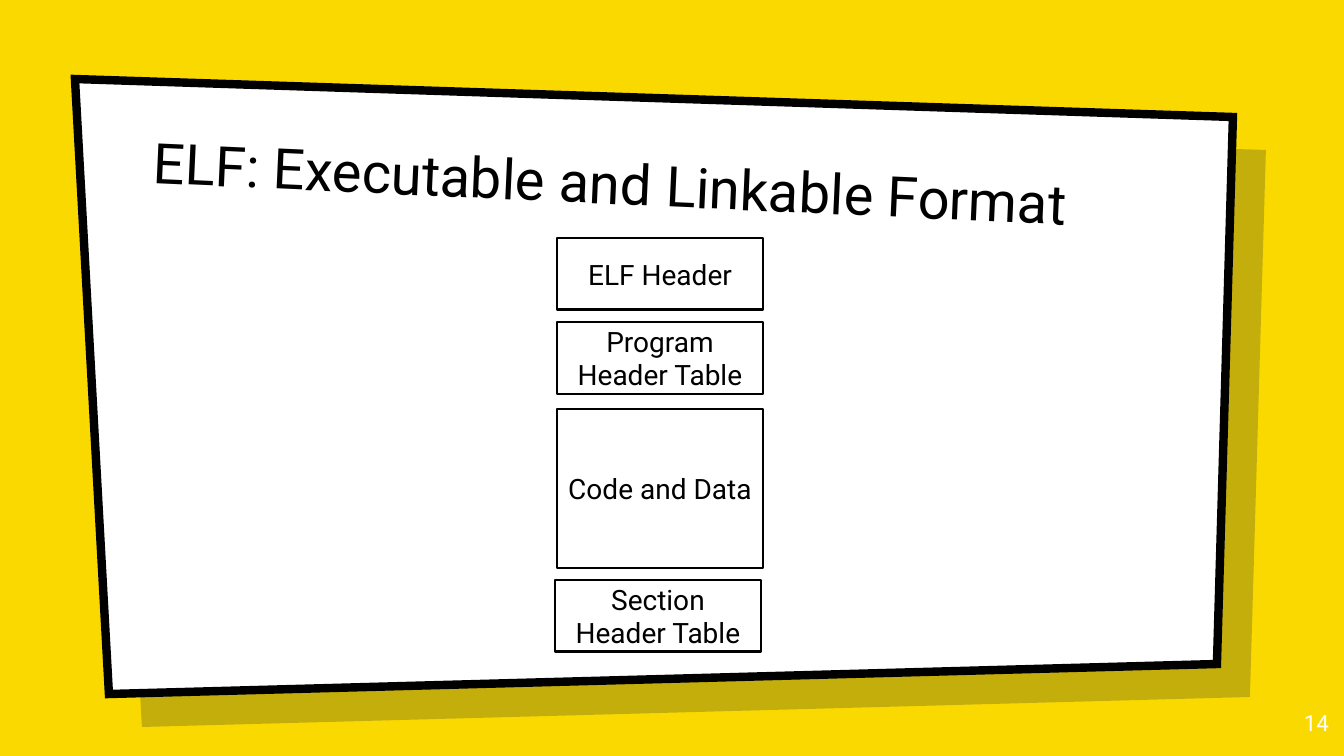
from lxml.etree import SubElement
from pptx import Presentation
from pptx.dml.color import RGBColor
from pptx.enum.shapes import MSO_SHAPE
from pptx.enum.text import MSO_ANCHOR, PP_ALIGN
from pptx.oxml.ns import qn
from pptx.util import Pt

PX = 914400 / 100.8  # EMU per pixel
YELLOW = RGBColor(0xFA, 0xD9, 0x00)
NAVY = RGBColor(0x00, 0x19, 0x36)
BLACK = RGBColor(0x00, 0x00, 0x00)
WHITE = RGBColor(0xFF, 0xFF, 0xFF)


def px(*lengths):
    return [round(length * PX) for length in lengths]


def write(shape, text, size, color, align, anchor, margins):
    frame = shape.text_frame
    frame.word_wrap = True
    frame.vertical_anchor = anchor
    for side, margin in zip(("left", "top", "right", "bottom"), px(*margins)):
        setattr(frame, f"margin_{side}", margin)
    paragraph = frame.paragraphs[0]
    paragraph.alignment = align
    run = paragraph.add_run()
    run.text = text
    for key, value in {"name": "Roboto", "size": Pt(size)}.items():
        setattr(run.font, key, value)
    run.font.color.rgb = color


prs = Presentation()
prs.slide_width, prs.slide_height = px(1344, 756)
slide = prs.slides.add_slide(prs.slide_layouts[6])
slide.background.fill.solid()
slide.background.fill.fore_color.rgb = YELLOW

# Slanted panel over its offset shade
corners = [(75, 79), (1233, 117), (1217, 664), (109, 694)]
for offset, color in ((33, NAVY), (0, WHITE)):
    points = [(x + offset, y + offset) for x, y in corners]
    builder = slide.shapes.build_freeform(*points[0], scale=PX)
    builder.add_line_segments(points[1:], close=True)
    panel = builder.convert_to_shape()
    panel.shadow.inherit = False
    panel.fill.solid()
    panel.fill.fore_color.rgb = color
    if offset:
        panel.line.fill.background()
        shade_color = panel.fill._xPr.find(".//" + qn("a:srgbClr"))
        SubElement(shade_color, qn("a:alpha"), val="22000")
    else:
        panel.line.color.rgb = BLACK
        panel.line.width = Pt(6)
        SubElement(panel.line._get_or_add_ln(), qn("a:miter"), lim="800000")

# Title, tilted along the panel's top edge
title = slide.shapes.add_textbox(*px(143, 129, 1033, 112))
title.rotation = 2.7
write(title, "ELF: Executable and Linkable Format", 40, BLACK,
      PP_ALIGN.LEFT, MSO_ANCHOR.MIDDLE, (10, 10, 10, 10))

# Slide number
number = slide.shapes.add_textbox(*px(1258, 699, 81, 57))
write(number, "14", 16, WHITE, PP_ALIGN.RIGHT, MSO_ANCHOR.TOP, (10, 10, 10, 10))

# ELF file layout, from first part to last
file_layout = slide.shapes.add_group_shape()
for text, left, top, height in (
    ("ELF Header", 557, 238, 72),
    ("Program Header Table", 557, 322, 72),
    ("Code and Data", 557, 409, 159),
    ("Section Header Table", 555, 580, 72),
):
    part = file_layout.shapes.add_shape(
        MSO_SHAPE.RECTANGLE, *px(left, top, 206, height))
    part.shadow.inherit = False
    part.fill.solid()
    part.fill.fore_color.rgb = WHITE
    part.line.color.rgb = BLACK
    part.line.width = Pt(2)
    write(part, text, 20, BLACK, PP_ALIGN.CENTER, MSO_ANCHOR.MIDDLE, (10, 5, 10, 5))

prs.save("out.pptx")
